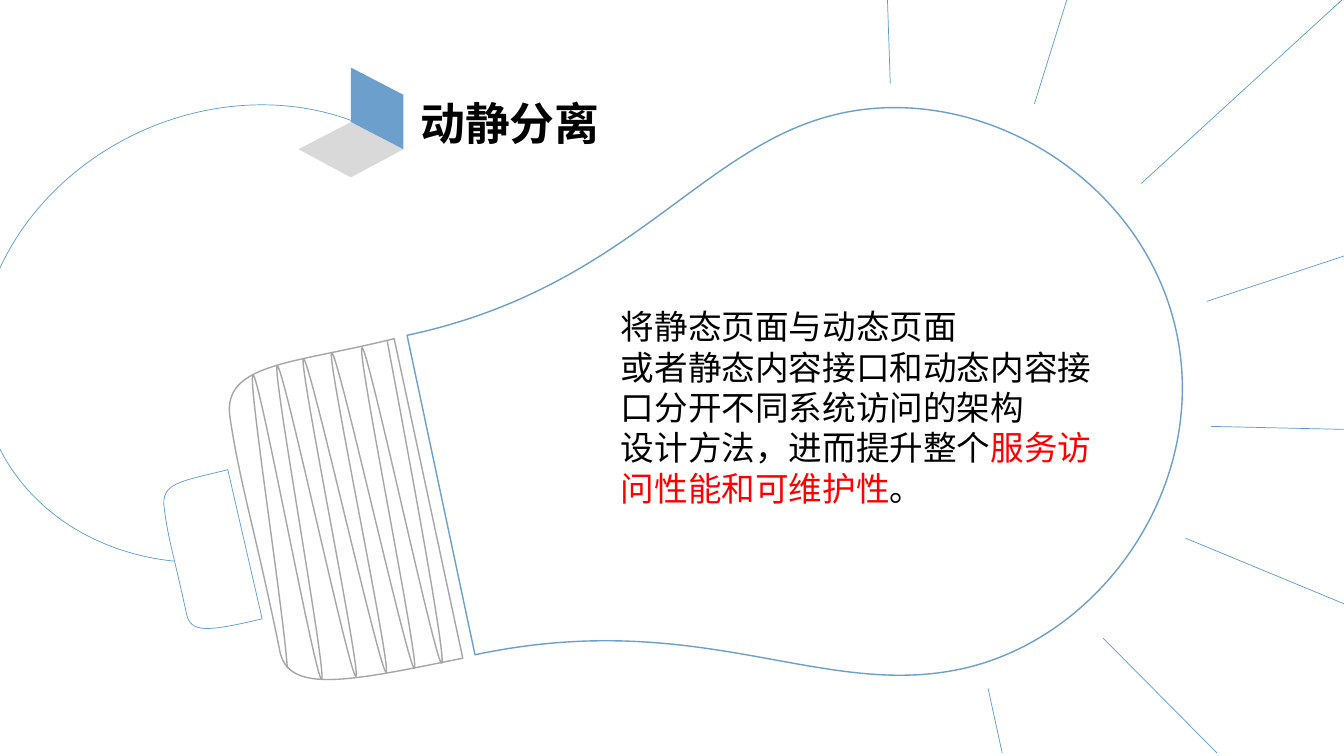
from math import cos, radians, sin

from lxml.etree import SubElement
from pptx import Presentation
from pptx.dml.color import RGBColor
from pptx.enum.shapes import MSO_CONNECTOR as CONN, MSO_SHAPE as SHAPE
from pptx.oxml.ns import qn
from pptx.util import Emu, Pt

PX = 9144  # 100 px to the inch
WIDTH, HEIGHT = 1333, 750
BLUE, BULB_BLUE, GREY, PALE_GREY = "5B9BD5", "6D9FCC", "A6A6A6", "D9D9D9"
BLACK, RED = "000000", "FF0000"
CJK = "Noto Sans CJK SC"
THIN, MEDIUM = 0.5, 1
TILT = -12  # direction of the bulb's axis, in degrees


def px(n):
    return Emu(round(n * PX))


def rgb(color):
    return RGBColor.from_string(color)


def stroke(line, color, width):
    line.color.rgb = rgb(color)
    line.width = Pt(width)


def turn(x, y, degrees):
    a = radians(degrees)
    return x * cos(a) - y * sin(a), x * sin(a) + y * cos(a)


def bend_lines(sp, segments):
    """Turn each run of three line steps that stands for a curve into a Bezier."""
    steps = iter(list(sp._element.iter(qn("a:lnTo"))))
    for segment in segments:
        parts = [next(steps) for _ in segment]
        if len(parts) == 3:
            curve = parts[0].makeelement(qn("a:cubicBezTo"))
            parts[0].addprevious(curve)
            for part in parts:
                curve.append(part[0])
                part.getparent().remove(part)


def turn_frame(sp, rotation):
    """Rotate a shape about the page origin: move its centre, then spin it."""
    cx, cy = sp.left + sp.width / 2, sp.top + sp.height / 2
    new_cx, new_cy = turn(cx, cy, rotation)
    sp.left = Emu(round(sp.left + new_cx - cx))
    sp.top = Emu(round(sp.top + new_cy - cy))
    sp.rotation = rotation


def add_outline(shapes, start, segments, rotation=0, line=None, fill=None, closed=True):
    """Each segment lists one point for a line, or two handles and an end for a curve."""
    points = [start] + [point for segment in segments for point in segment]
    level = [turn(px(x), px(y), -rotation) for x, y in points]
    builder = shapes.build_freeform(*level[0], scale=1.0)
    builder.add_line_segments(level[1:], close=closed)
    sp = builder.convert_to_shape()
    sp.shadow.inherit = False
    bend_lines(sp, segments)
    turn_frame(sp, rotation)
    if fill:
        sp.fill.solid()
        sp.fill.fore_color.rgb = rgb(fill)
    else:
        sp.fill.background()
    if line:
        stroke(sp.line, *line)
    else:
        sp.line.fill.background()


def add_text(shapes, box, paragraphs, size, font, bold=False):
    tf = shapes.add_textbox(*map(px, box)).text_frame
    tf.word_wrap = True
    for i, runs in enumerate(paragraphs):
        p = tf.paragraphs[0] if i == 0 else tf.add_paragraph()
        for text, color in runs:
            r = p.add_run()
            r.text = text
            r.font.size, r.font.name, r.font.bold = Pt(size), font, bold
            r.font.color.rgb = rgb(color)
            SubElement(r.font._element, qn("a:ea")).set("typeface", CJK)


def add_cord(shapes, box):
    sp = shapes.add_shape(SHAPE.ARC, *map(px, box))
    sp.shadow.inherit = False
    sp.adjustments[0], sp.adjustments[1] = 131.487, 36.176
    sp.rotation = 245
    sp.fill.background()
    stroke(sp.line, BLUE, THIN)


def add_glass(shapes, cx, cy):
    """Two mirrored shoulders on a tilted axis through the dome's centre."""
    neck, neck_top, neck_bottom = -468, -156, 168
    radius, tip = 282, 279
    neck_pull, shoulder_pull, tip_pull = 228, 143, 155

    def place(x, y):
        dx, dy = turn(x, y, TILT)
        return cx + dx, cy + dy

    outline = [
        # Neck to upper shoulder, then to the tip
        [(neck + neck_pull, neck_top), (-shoulder_pull, -radius), (0, -radius)],
        [(shoulder_pull, -radius), (tip, -tip_pull), (tip, 0)],
        # Tip to lower shoulder, then back to the neck
        [(tip, tip_pull), (shoulder_pull, radius), (0, radius)],
        [(-shoulder_pull, radius), (neck + neck_pull, neck_bottom), (neck, neck_bottom)],
        [(neck, neck_top)],
    ]
    segments = [[place(x, y) for x, y in segment] for segment in outline]
    add_outline(shapes, place(neck, neck_top), segments, TILT % 360, (BULB_BLUE, MEDIUM))


def add_thread(shapes, x, y):
    """One zigzag: down from each crest to its trough, then up to the next crest."""
    crests = [(133, 0), (108, 7), (78, 12), (50, 18), (24, 25), (0, 34)]
    troughs = [(187, 320), (160, 325), (132, 329), (102, 333), (68, 336), (34, 325)]
    stops = [(x + dx, y + dy) for pair in zip(crests, troughs) for dx, dy in pair]
    # Short handles round off every turn
    segments = [[(x1 - 6, y1 + 1), (x2 + 6, y2 - 1), (x2, y2)]
                for (x1, y1), (x2, y2) in zip(stops, stops[1:])]
    # The two loose ends run out with longer handles
    segments[0][0] = (x + 146, y + 70)
    segments[-1][1] = (x + 30, y + 266)
    add_outline(shapes, stops[0], segments, line=(GREY, MEDIUM), closed=False)


def add_base(shapes, x, y, corners, rotation, line):
    """A rounded metal part: open side at the right, two soft corners at the left."""
    points = [(x + dx, y + dy) for dx, dy in corners]
    start, curve_points = points[0], points[1:]
    segments = [curve_points[i:i + 3] for i in range(0, len(curve_points), 3)]
    add_outline(shapes, start, segments + [[start]], rotation, line)


def add_bulb(shapes):
    add_glass(shapes, 894, 388)
    socket = [(238, 317), (126, 340), (67, 352), (57, 312), (33, 193),
              (17, 145), (7, 77), (0, 24), (71, 25), (170, 0)]
    cap = [(101, 148), (46, 161), (30, 162), (26, 143), (14, 87),
           (8, 70), (4, 39), (0, 13), (19, 12), (67, 0)]
    add_base(shapes, 221, 336, socket, 10, (GREY, MEDIUM))
    add_base(shapes, 159, 466, cap, 10, (BLUE, THIN))
    add_thread(shapes, 251, 338)


def add_rays(shapes):
    # Near end by the glass, far end at the slide's edge
    rays = [((1197, 299), (1336, 253)), ((1132, 182), (1332, -1)),
            ((1026, 103), (1059, -3)), ((883, 83), (880, -6)),
            ((1201, 423), (1333, 426)), ((1176, 534), (1333, 599)),
            ((1094, 633), (1207, 747)), ((980, 683), (994, 747))]
    for near, far in rays:
        ray = shapes.add_connector(CONN.STRAIGHT, *map(px, near + far))
        stroke(ray.line, BLUE, THIN)
        SubElement(ray._element.spPr, qn("a:effectLst"))


def add_heading(shapes, box, title):
    x, y, w, h = box
    add_text(shapes, (x + 111, y + 23, w - 111, 64), [[(title, BLACK)]], 32, CJK, bold=True)
    # Folded corner: a floor diamond and the wall standing on it
    half, slope = 52, 27
    right, mid = x + 2 * half, x + half
    hinge, level = y + 2 * slope, y + 3 * slope
    floor = [(mid, h + y), (x, level), (mid, hinge), (right, level)]
    wall = [(right, level), (mid, hinge), (mid, y), (right, y + slope)]
    for corners, rotation, color in ((floor, 225, PALE_GREY), (wall, 180, BULB_BLUE)):
        add_outline(shapes, corners[0], [[c] for c in corners[1:]], rotation, fill=color)


def add_body(shapes, box):
    add_text(shapes, box, [
        [("将静态页面与动态页面", BLACK)],
        [("或者静态内容接口和动态内容接口分开不同系统访问的架构", BLACK)],
        [("设计方法，进而提升整个", BLACK), ("服务访问性能和可维护性", RED), ("。", BLACK)],
    ], 24, "Arial")


def main():
    prs = Presentation()
    prs.slide_width, prs.slide_height = px(WIDTH), px(HEIGHT)
    shapes = prs.slides.add_slide(prs.slide_layouts[6]).shapes
    add_cord(shapes, (10, 74, 440, 514))
    add_bulb(shapes)
    add_rays(shapes)
    add_body(shapes, (606, 299, 501, 242))
    add_heading(shapes, (296, 67, 485, 109), "动静分离")
    prs.save("out.pptx")


if __name__ == "__main__":
    main()
